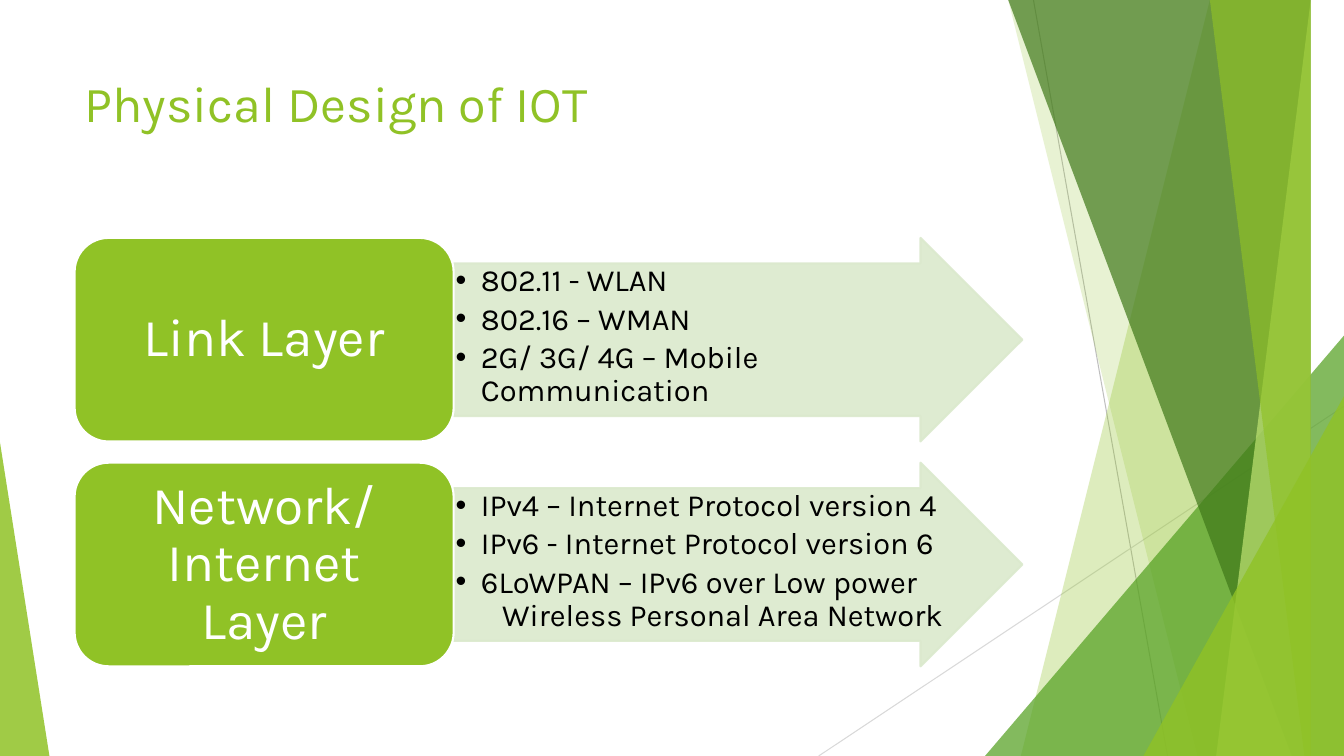
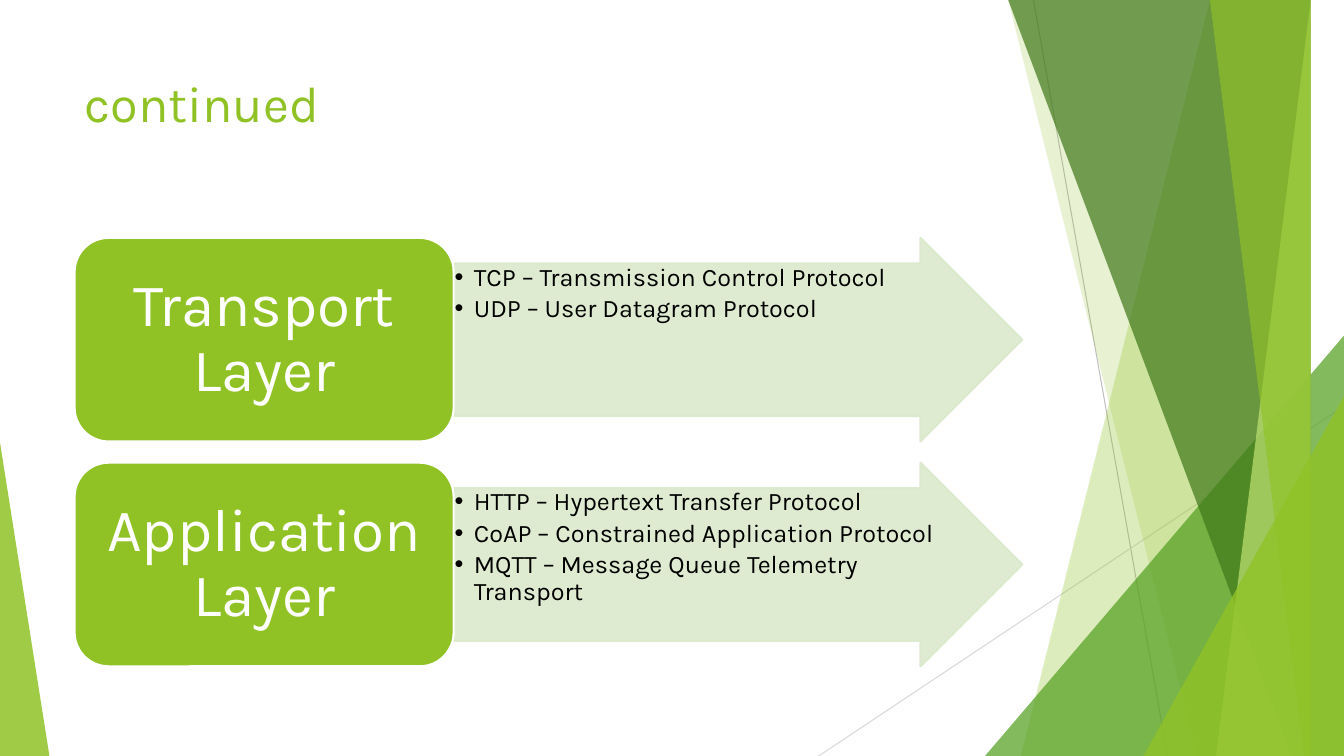
from lxml import etree
from pptx import Presentation
from pptx.dml.color import RGBColor
from pptx.enum.shapes import MSO_CONNECTOR, MSO_SHAPE
from pptx.enum.text import MSO_ANCHOR, PP_ALIGN
from pptx.oxml.ns import qn
from pptx.util import Inches, Pt

STRAIGHT = MSO_CONNECTOR.STRAIGHT
TRIANGLE = MSO_SHAPE.ISOSCELES_TRIANGLE
ARROW, ROUNDED = MSO_SHAPE.RIGHT_ARROW, MSO_SHAPE.ROUNDED_RECTANGLE
TOP, MIDDLE = MSO_ANCHOR.TOP, MSO_ANCHOR.MIDDLE
LEFT, CENTER = PP_ALIGN.LEFT, PP_ALIGN.CENTER

SLIDES = [
    {"title": "Physical Design of IOT", "label_size": 38, "item_size": 22,
     "indent": 0.25, "inset": 0.02,
     "layers": [
         ("Link Layer", ["802.11 - WLAN", "802.16 – WMAN",
                         "2G/ 3G/ 4G – Mobile Communication"]),
         ("Network/ Internet Layer", ["IPv4 – Internet Protocol version 4",
                                      "IPv6 - Internet Protocol version 6",
                                      ("6LoWPAN – IPv6 over Low power",
                                       "Wireless Personal Area Network")]),
     ]},
    {"title": "continued", "label_size": 43, "item_size": 18,
     "indent": 0.19, "inset": 0.01,
     "layers": [
         ("Transport Layer", ["TCP – Transmission Control Protocol",
                              "UDP – User Datagram Protocol"]),
         ("Application Layer", ["HTTP – Hypertext Transfer Protocol",
                                "CoAP – Constrained Application Protocol",
                                "MQTT – Message Queue Telemetry Transport"]),
     ]},
]

THEME = {"font": "Karla", "title_size": 36, "lime": "90C226", "green": "54A021",
         "dark": "3F7819", "pale": "C0E474", "arrow": "DBE9CD",
         "white": "FFFFFF", "black": "000000", "gray": "BFBFBF", "silver": "D9D9D9"}

W, H = 13.33, 7.5
MARGIN, CONTENT_W = 0.74, 9.4
LABEL_W = CONTENT_W * 0.4
ROW_TOP, ROW_H, ROW_PITCH = 2.36, 2.02, 2.23
HANGING = 0.21

RAYS = [((10.25, 0), (11.58, H), "gray"), ((W, 4.03), (8.12, H), "silver")]
FACETS = [
    ("panel", (12.28, 10.04), "lime", 30),
    ("panel", (10.5, 11.83), "lime", 20),
    ("corner", (9.77, 3.33, 3.56, 1), "green", 72),
    ("panel", (10.21, 12.91), "dark", 70),
    ("panel", (13.03, 11.92), "pale", 70),
    ("panel", (11.96, 13.18), "lime", 65),
    ("corner", (11.34, 3.93, 1.99, 1), "lime", 80),
    ("corner", (0, 4.39, 0.49, 0), "lime", 85),
]


def color(name):
    return RGBColor.from_string(THEME[name])


def set_alpha(fill_parent, opacity):
    for c in fill_parent.iter(qn("a:srgbClr")):
        etree.SubElement(c, qn("a:alpha"), val=str(opacity * 1000))


def paint(sp, fill, line=None, opacity=100):
    sp.shadow.inherit = False
    sp.fill.solid()
    sp.fill.fore_color.rgb = color(fill)
    if line:
        sp.line.color.rgb = color(line)
        sp.line.width = Pt(1.5)
    else:
        sp.line.fill.background()
    if opacity < 100:
        set_alpha(sp._element.spPr, opacity)


def add_shape(s, kind, box, fill, adj=(), **style):
    sp = s.shapes.add_shape(kind, *map(Inches, box))
    for i, value in enumerate(adj):
        sp.adjustments[i] = value
    paint(sp, fill, **style)
    return sp


def add_text_box(s, box):
    return s.shapes.add_textbox(*map(Inches, box))


def set_bullet(p, indent, bullet):
    ppr = p._p.get_or_add_pPr()
    ppr.set("marL", str(Inches(indent)))
    ppr.set("indent", str(-Inches(indent) if bullet else 0))
    if bullet:
        etree.SubElement(ppr, qn("a:buFont"), typeface="Arial")
        etree.SubElement(ppr, qn("a:buChar"), char="•")
    else:
        etree.SubElement(ppr, qn("a:buNone"))


def write(sp, items, size, ink, align=LEFT, anchor=TOP, insets=(0.1, 0.05, 0.1, 0.05),
          spacing=0.9, indent=None):
    tf = sp.text_frame
    tf.word_wrap = True
    tf.vertical_anchor = anchor
    tf.margin_left, tf.margin_top, tf.margin_right, tf.margin_bottom = map(Inches, insets)
    lines = []
    for item in items:
        parts = (item,) if isinstance(item, str) else item
        lines += [(text, i == 0, i == len(parts) - 1) for i, text in enumerate(parts)]
    for i, (text, first, last) in enumerate(lines):
        p = tf.paragraphs[0] if i == 0 else tf.add_paragraph()
        p.alignment = align
        p.line_spacing = spacing
        p.space_after = Pt(size * 0.16 if indent and last else 0)
        if indent:
            set_bullet(p, indent if first else indent + HANGING, first)
        r = p.add_run()
        r.text = text
        r.font.name = THEME["font"]
        r.font.size = Pt(size)
        r.font.color.rgb = color(ink)


def add_backdrop(s):
    for start, end, ink in RAYS:
        ray = s.shapes.add_connector(STRAIGHT, *map(Inches, start + end))
        ray.line.color.rgb = color(ink)
        ray.line.width = Pt(0.75)
        etree.SubElement(ray._element.spPr, qn("a:effectLst"))
    for kind, geometry, fill, opacity in FACETS:
        if kind == "panel":
            top_x, bottom_x = geometry
            outline = s.shapes.build_freeform(top_x, 0, scale=Inches(1))
            outline.add_line_segments([(W, 0), (W, H), (bottom_x, H)], close=True)
            paint(outline.convert_to_shape(), fill, opacity=opacity)
        else:
            x, y, w, apex = geometry
            add_shape(s, TRIANGLE, (x, y, w, H - y), fill, adj=[apex], opacity=opacity)


def add_layer(s, row, label, items, spec_row):
    y = ROW_TOP + row * ROW_PITCH
    x = MARGIN + LABEL_W
    add_shape(s, ARROW, (x, y, CONTENT_W - LABEL_W, ROW_H), "arrow",
              adj=[0.75, 0.5], line="arrow", opacity=90)
    pad = spec_row["inset"]
    write(add_text_box(s, (x, y + ROW_H / 8, 4.88, ROW_H * 0.75)), items,
          spec_row["item_size"], "black", insets=(pad, pad, 0, pad),
          indent=spec_row["indent"])
    size = spec_row["label_size"]
    inset = size / 240
    write(add_shape(s, ROUNDED, (MARGIN, y, LABEL_W, ROW_H), "lime", line="white"),
          [label], size, "white", align=CENTER, anchor=MIDDLE,
          insets=(inset, inset / 2, inset, inset / 2))


def main():
    prs = Presentation()
    prs.slide_width, prs.slide_height = Inches(W), Inches(H)
    for content in SLIDES:
        s = prs.slides.add_slide(prs.slide_layouts[6])
        add_backdrop(s)
        write(add_text_box(s, (MARGIN, 0.67, CONTENT_W, 1.44)), [content["title"]],
              THEME["title_size"], "lime", spacing=1.0)
        for row, (label, items) in enumerate(content["layers"]):
            add_layer(s, row, label, items, content)
    prs.save("out.pptx")


if __name__ == "__main__":
    main()
